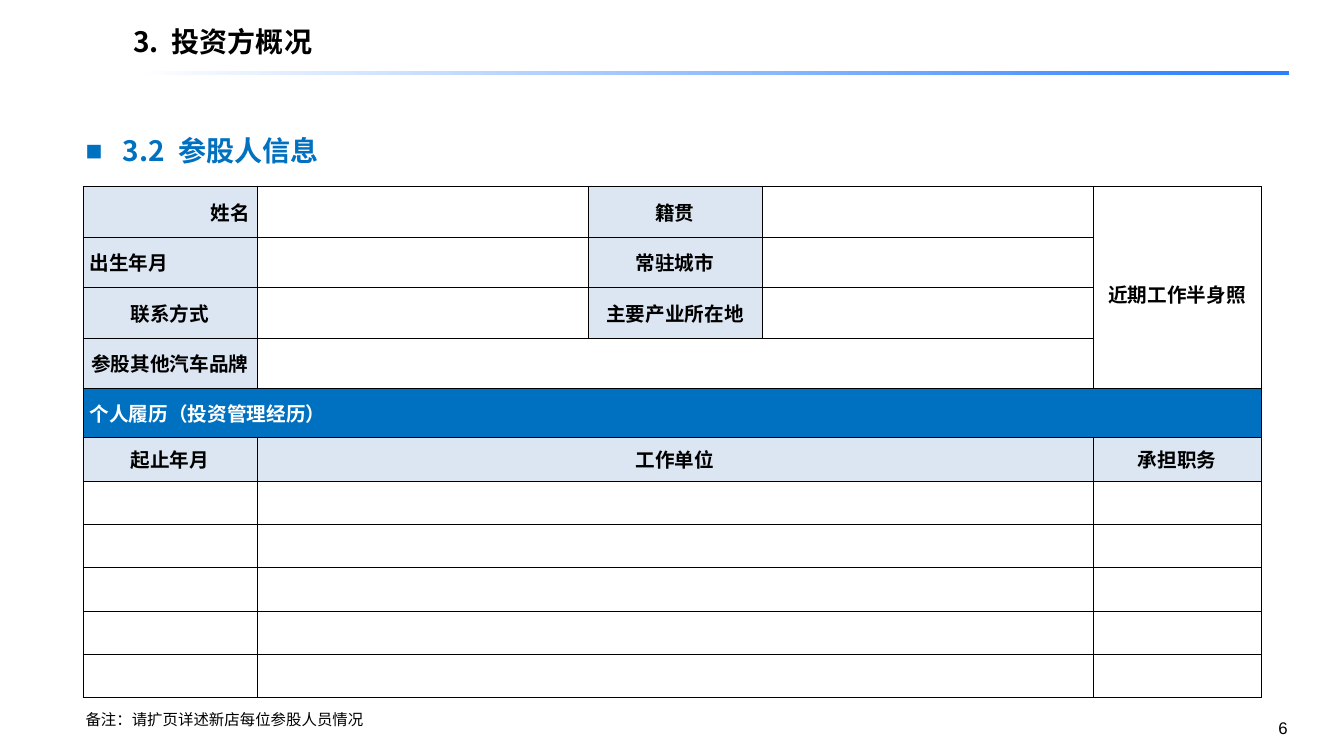
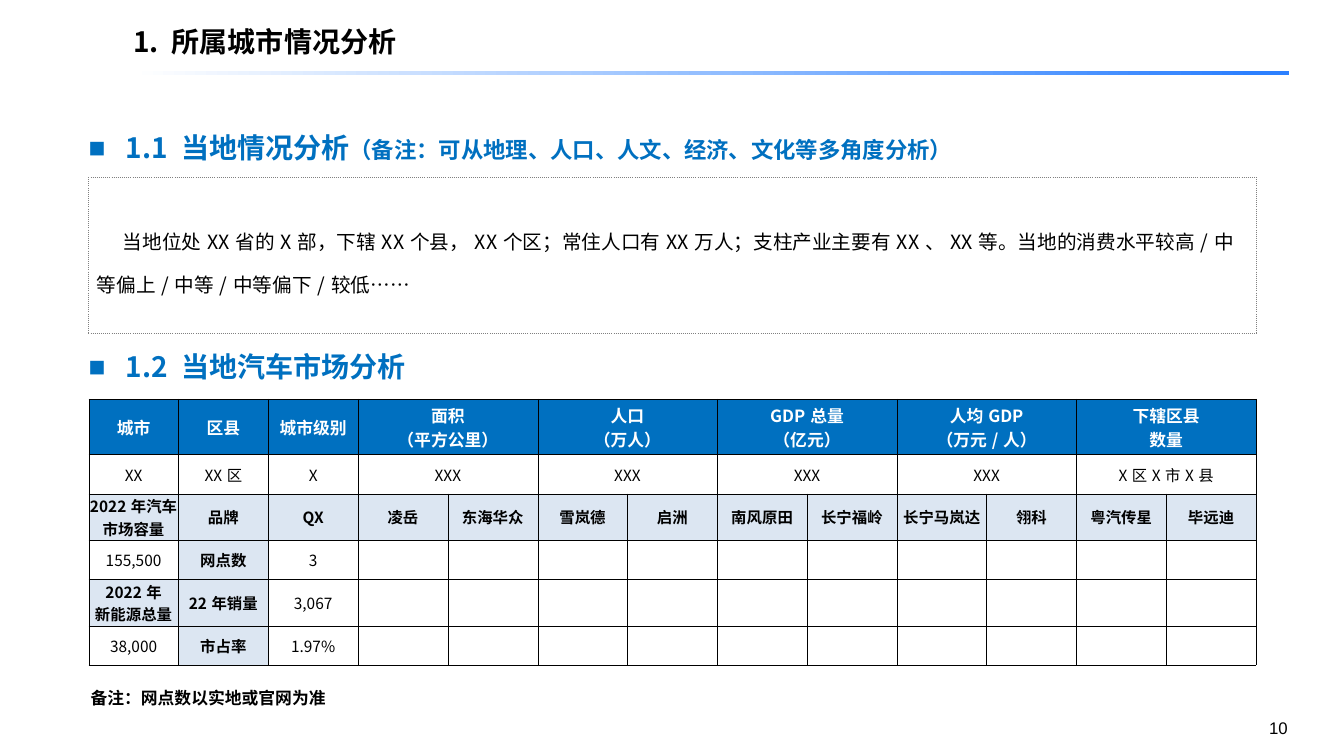
from dataclasses import dataclass

from lxml import etree
from pptx import Presentation
from pptx.dml import color
from pptx.enum import shapes, text
from pptx.oxml import ns
from pptx.util import Inches, Pt

LEFT, CENTER, RIGHT = text.PP_ALIGN.LEFT, text.PP_ALIGN.CENTER, text.PP_ALIGN.RIGHT


@dataclass(frozen=True)
class Theme:
    font: str = "Noto Sans CJK SC"
    number_font: str = "Arial"
    ink: str = "000000"
    white: str = "FFFFFF"
    accent: str = "0070C0"
    tint: str = "DCE6F2"
    dotted: str = "808080"
    rule: tuple = ((0, "FFFFFF"), (51, "91BDFF"), (97, "2C80FF"))
    title: int = 20
    remark: int = 16
    body: int = 14
    small: int = 12
    tiny: int = 11


THEME = Theme()


@dataclass(frozen=True)
class Look:
    size: int
    bold: bool = False
    ink: str = THEME.ink
    fill: str = ""
    align: int = CENTER
    spacing: float = 1.0
    indent: float = 0


@dataclass(frozen=True)
class Border:
    ink: str = THEME.ink
    width: float = 0.25
    dash: str = "solid"


def box_lengths(box):
    return [Inches(length) for length in box]


def style_run(run, size, bold=False, ink=THEME.ink, font=THEME.font):
    run.font.size = Pt(size)
    run.font.bold = bold
    run.font.color.rgb = color.RGBColor.from_string(ink)
    run.font.name = font
    east_asian = etree.SubElement(run.font._element, ns.qn("a:ea"))
    east_asian.set("typeface", font)


def add_line(slide, box, words, size, bold=False, align=LEFT, font=THEME.font):
    frame = slide.shapes.add_textbox(*box_lengths(box)).text_frame
    frame.word_wrap = True
    frame.text = words
    frame.paragraphs[0].alignment = align
    style_run(frame.paragraphs[0].runs[0], size, bold, font=font)


def add_heading(slide, box, words, remark=""):
    frame = slide.shapes.add_textbox(*box_lengths(box)).text_frame
    frame.word_wrap = True
    heading = frame.paragraphs[0]
    heading.text = words
    properties = heading._p.get_or_add_pPr()
    properties.set("marL", str(Inches(0.37)))
    properties.set("indent", str(-Inches(0.37)))
    etree.SubElement(properties, ns.qn("a:buFont")).set("typeface", THEME.number_font)
    etree.SubElement(properties, ns.qn("a:buChar")).set("char", "■")
    style_run(heading.runs[0], THEME.title, True, THEME.accent)
    if remark:
        addition = heading.add_run()
        addition.text = remark
        style_run(addition, THEME.remark, True, THEME.accent)


def add_rule(slide, box):
    rule = slide.shapes.add_shape(shapes.MSO_SHAPE.RECTANGLE, *box_lengths(box))
    rule.shadow.inherit = False
    rule.line.fill.background()
    rule.fill.gradient()
    rule.fill.gradient_angle = 0
    stops = rule._element.spPr.find(".//" + ns.qn("a:gsLst"))
    for stop in list(stops):
        stops.remove(stop)
    for position, ink in THEME.rule:
        stop = etree.SubElement(stops, ns.qn("a:gs"), pos=str(position * 1000))
        etree.SubElement(stop, ns.qn("a:srgbClr"), val=ink)


def add_page(deck, heading, number):
    slide = deck.slides.add_slide(deck.slide_layouts[5])
    add_rule(slide, (1.3, 0.7, 11.48, 0.04))
    title = slide.shapes.title
    title.left, title.top, title.width, title.height = box_lengths((1.24, 0.06, 11.5, 0.75))
    frame = title.text_frame
    frame.text = heading
    frame.auto_size = text.MSO_AUTO_SIZE.NONE
    frame.vertical_anchor = text.MSO_ANCHOR.MIDDLE
    frame.margin_left = frame.margin_right = Inches(0.08)
    frame.margin_top = frame.margin_bottom = Inches(0.04)
    frame.paragraphs[0].alignment = LEFT
    frame.paragraphs[0].line_spacing = 0.9
    style_run(frame.paragraphs[0].runs[0], THEME.title, True)
    add_line(slide, (11.13, 7.07, 1.74, 0.3), number, THEME.small,
             align=RIGHT, font=THEME.number_font)
    return slide


def set_borders(cell, border):
    properties = cell._tc.get_or_add_tcPr()
    for place, side in enumerate("LRTB"):
        edge = etree.Element(ns.qn(f"a:ln{side}"), w=str(Pt(border.width)))
        fill = etree.SubElement(edge, ns.qn("a:solidFill"))
        etree.SubElement(fill, ns.qn("a:srgbClr"), val=border.ink)
        etree.SubElement(edge, ns.qn("a:prstDash"), val=border.dash)
        properties.insert(place, edge)


def fill_cell(cell, words, look):
    if look.fill:
        cell.fill.solid()
        cell.fill.fore_color.rgb = color.RGBColor.from_string(look.fill)
    cell.text_frame.text = words
    for paragraph in cell.text_frame.paragraphs:
        paragraph.alignment = look.align
        paragraph.line_spacing = look.spacing
        if look.indent:
            paragraph._p.get_or_add_pPr().set("indent", str(Inches(look.indent)))
        for run in paragraph.runs:
            style_run(run, look.size, look.bold, look.ink)


def add_grid(slide, box, columns, rows, entries, merges=(), pad=(0.07, 0), border=Border()):
    frame = slide.shapes.add_table(len(rows), len(columns), *box_lengths(box))
    grid = frame.table
    grid.first_row = grid.horz_banding = False
    for column, width in zip(grid.columns, columns):
        column.width = Inches(width)
    for row, height in zip(grid.rows, rows):
        row.height = Inches(height)
    for row, column, height, width in merges:
        grid.cell(row, column).merge(grid.cell(row + height - 1, column + width - 1))
    for r in range(len(rows)):
        for c in range(len(columns)):
            cell = grid.cell(r, c)
            cell.vertical_anchor = text.MSO_ANCHOR.MIDDLE
            cell.margin_left = cell.margin_right = Inches(pad[0])
            cell.margin_top = cell.margin_bottom = Inches(pad[1])
            cell.fill.background()
            if (r, c) in entries:
                fill_cell(cell, *entries[r, c])
            set_borders(cell, border)


def add_profile(slide, box):
    label = Look(THEME.body, True, fill=THEME.tint)
    entries = {
        (0, 0): ("姓名", Look(THEME.body, True, fill=THEME.tint, align=RIGHT)),
        (1, 0): ("出生年月", Look(THEME.body, True, fill=THEME.tint, align=LEFT)),
        (2, 0): ("联系方式", label),
        (3, 0): ("参股其他汽车品牌", label),
        (0, 2): ("籍贯", label),
        (1, 2): ("常驻城市", label),
        (2, 2): ("主要产业所在地", label),
        (0, 4): ("近期工作半身照", Look(THEME.body, True, spacing=1.5)),
        (4, 0): ("个人履历（投资管理经历）",
                 Look(THEME.body, True, THEME.white, THEME.accent, LEFT)),
        (5, 0): ("起止年月", label),
        (5, 1): ("工作单位", label),
        (5, 4): ("承担职务", label),
    }
    merges = [(0, 4, 4, 1), (3, 1, 1, 3), (4, 0, 1, 5)]
    merges += [(row, 1, 1, 3) for row in range(5, 11)]
    add_grid(slide, box, [1.73, 3.28, 1.73, 3.28, 1.67],
             [0.5] * 4 + [0.49] + [0.43] * 6, entries, merges)


def add_market(slide, box):
    header = Look(THEME.small, True, THEME.white, THEME.accent)
    label = Look(THEME.tiny, True, fill=THEME.tint)
    value = Look(THEME.tiny)
    starts = [0, 1, 2, 3, 5, 7, 9, 11]
    headers = ["城市", "区县", "城市级别", "面积\n（平方公里）", "人口\n（万人）",
               "GDP总量\n（亿元）", "人均GDP\n（万元/人）", "下辖区县\n数量"]
    city = ["XX", "XX区", "X"] + ["XXX"] * 4 + ["X区X市X县"]
    brands = ["2022年汽车市场容量", "品牌", "QX", "凌岳", "东海华众", "雪岚德", "启洲",
              "南风原田", "长宁福岭", "长宁马岚达", "翎科", "粤汽传星", "毕远迪"]
    figures = [
        ("155,500", value, "网点数", "3"),
        ("2022年\n新能源总量", label, "22年销量", "3,067"),
        ("38,000", value, "市占率", "1.97%"),
    ]
    entries = {(0, c): (words, header) for c, words in zip(starts, headers)}
    entries.update({(1, c): (words, value) for c, words in zip(starts, city)})
    entries.update({(2, c): (words, label) for c, words in enumerate(brands)})
    for row, (total, look, measure, amount) in enumerate(figures, 3):
        entries[row, 0] = (total, look)
        entries[row, 1] = (measure, label)
        entries[row, 2] = (amount, value)
    merges = [(row, c, 1, 2) for row in (0, 1) for c in starts[3:]]
    count = len(brands)
    add_grid(slide, box, [box[2] / count] * count, [0.55, 0.39] + [0.46, 0.39] * 2,
             entries, merges, pad=(0.01, 0))


def add_city_summary(slide, box):
    summary = ("当地位处XX省的X部，下辖XX个县，XX个区；常住人口有XX万人；"
               "支柱产业主要有XX、XX等。当地的消费水平较高/中等偏上/中等/中等偏下/较低……")
    look = Look(THEME.body, align=LEFT, spacing=1.5, indent=0.26)
    add_grid(slide, box, [box[2]], [box[3]], {(0, 0): (summary, look)}, pad=(0.08, 0.04),
             border=Border(THEME.dotted, 0.5, "sysDot"))


def build_investor(deck):
    slide = add_page(deck, "3. 投资方概况", "6")
    add_heading(slide, (0.75, 1.28, 8.11, 0.47), "3.2 参股人信息")
    add_profile(slide, (0.82, 1.85, 11.69, 5.07))
    add_line(slide, (0.75, 7, 3.53, 0.29), "备注：请扩页详述新店每位参股人员情况", THEME.tiny)


def build_city(deck):
    slide = add_page(deck, "1. 所属城市情况分析", "10")
    add_heading(slide, (0.78, 1.25, 10.1, 0.47), "1.1 当地情况分析",
                "（备注：可从地理、人口、人文、经济、文化等多角度分析）")
    add_city_summary(slide, (0.88, 1.76, 11.58, 1.55))
    add_heading(slide, (0.78, 3.42, 10.1, 0.47), "1.2 当地汽车市场分析")
    add_market(slide, (0.88, 3.96, 11.58, 2.64))
    add_line(slide, (0.8, 6.77, 2.71, 0.3), "备注：网点数以实地或官网为准", THEME.small, True)


def main():
    deck = Presentation()
    deck.slide_width, deck.slide_height = Inches(13.33), Inches(7.5)
    build_investor(deck)
    build_city(deck)
    deck.save("out.pptx")


if __name__ == "__main__":
    main()
